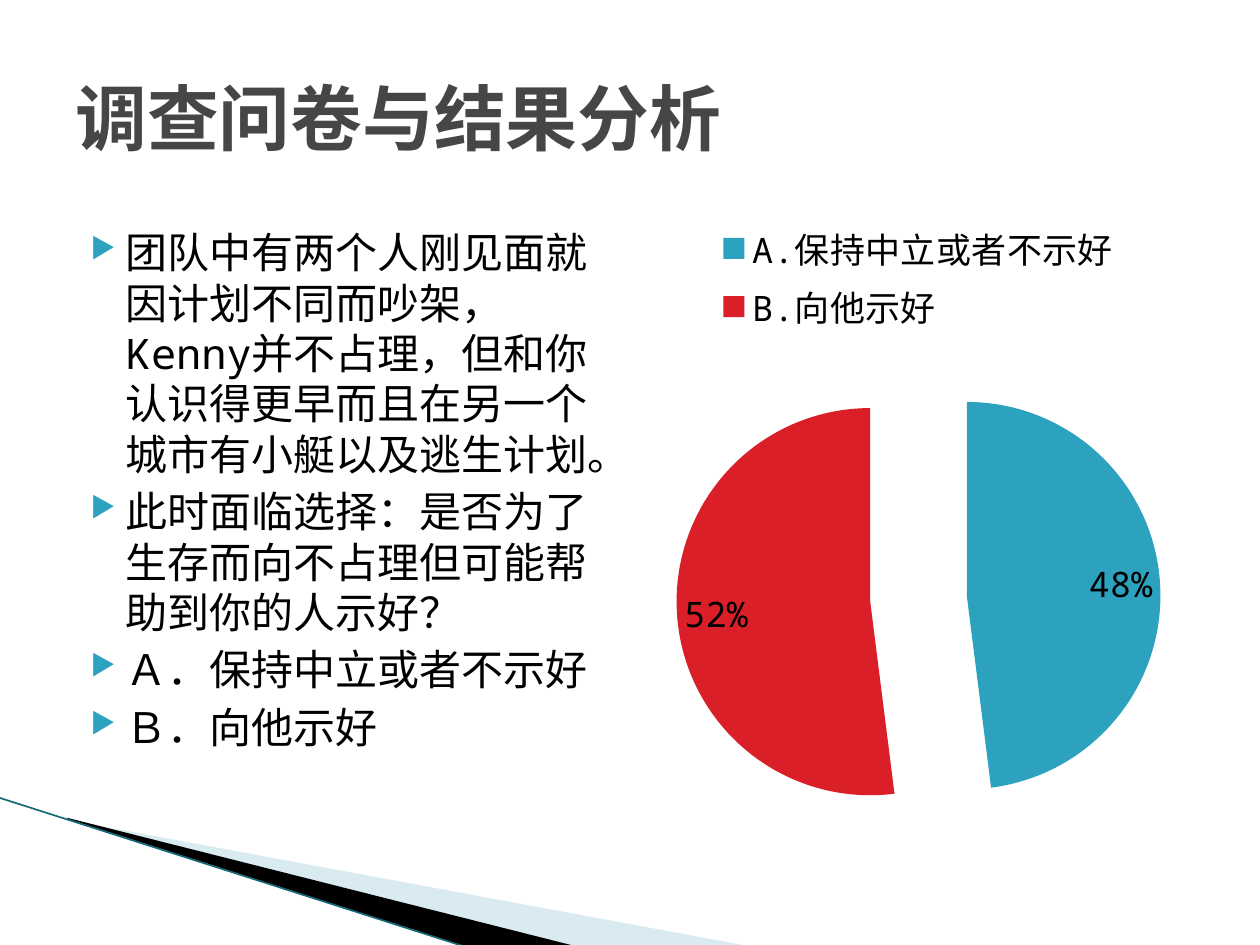
from lxml import etree
from pptx import Presentation
from pptx.chart.data import CategoryChartData
from pptx.dml.color import RGBColor
from pptx.enum.chart import XL_CHART_TYPE, XL_LABEL_POSITION, XL_LEGEND_POSITION
from pptx.enum.shapes import MSO_CONNECTOR
from pptx.enum.text import MSO_ANCHOR
from pptx.oxml.ns import qn
from pptx.util import Inches, Pt

PIE = XL_CHART_TYPE.PIE
INSIDE_END = XL_LABEL_POSITION.INSIDE_END
LEGEND_TOP = XL_LEGEND_POSITION.TOP
STRAIGHT = MSO_CONNECTOR.STRAIGHT
MIDDLE = MSO_ANCHOR.MIDDLE

FONT = "Noto Sans Mono"
BLACK, GREY, TEAL, RED = "000000", "464646", "2DA2BF", "DA1F28"
PALE_BLUE, EDGE_BLUE = "A0CBDC", "17687A"

TITLE = "调查问卷与结果分析"
POINTS = [
    "团队中有两个人刚见面就因计划不同而吵架，Kenny并不占理，但和你认识得更早而且在另一个城市有小艇以及逃生计划。",
    "此时面临选择：是否为了生存而向不占理但可能帮助到你的人示好？",
    "Ａ．保持中立或者不示好",
    "Ｂ．向他示好",
]
ANSWERS = [("A.保持中立或者不示好", 48, TEAL), ("B.向他示好", 52, RED)]


def rgb(color):
    return RGBColor.from_string(color)


def set_font(font, size, color, bold=False):
    font.name, font.size, font.bold = FONT, Pt(size), bold
    font.color.rgb = rgb(color)


def set_east_asian_font(run):
    etree.SubElement(run.font._element, qn("a:ea"), typeface=FONT)


def add_wedge(slide, points, color, opacity=100):
    corners = [(Inches(x), Inches(y)) for x, y in points]
    builder = slide.shapes.build_freeform(*corners[0])
    builder.add_line_segments(corners[1:], close=True)
    wedge = builder.convert_to_shape()
    wedge.shadow.inherit = False
    wedge.fill.solid()
    wedge.fill.fore_color.rgb = rgb(color)
    wedge.line.fill.background()
    if opacity < 100:
        fill_color = wedge._element.spPr.find(".//" + qn("a:srgbClr"))
        etree.SubElement(fill_color, qn("a:alpha"), val=str(opacity * 1000))


def add_corner_decoration(slide, left, top):
    def place(*offsets):
        return [(left + x, top + y) for x, y in offsets]

    add_wedge(slide, place((0.55, 0.18), (5.95, 1.18), (4.56, 1.18), (0.55, 0.17)),
              PALE_BLUE, 40)
    add_wedge(slide, place((0.53, 0.16), (4.57, 1.18), (3.72, 1.19), (0.54, 0.17)), BLACK)
    (x1, y1), (x2, y2) = place((-0.01, 0), (3.71, 1.19))
    edge = slide.shapes.add_connector(STRAIGHT, Inches(x1), Inches(y1), Inches(x2), Inches(y2))
    edge.line.color.rgb = rgb(EDGE_BLUE)
    edge.line.width = Pt(0.95)
    etree.SubElement(edge._element.spPr, qn("a:effectLst"))


def add_text_frame(slide, box):
    frame = slide.shapes.add_textbox(*map(Inches, box)).text_frame
    frame.word_wrap = True
    return frame


def add_title(slide, box):
    frame = add_text_frame(slide, box)
    frame.vertical_anchor = MIDDLE
    frame.text = TITLE
    run = frame.paragraphs[0].runs[0]
    set_font(run.font, 41, GREY, bold=True)
    set_east_asian_font(run)


def add_bullet(paragraph):
    properties = paragraph._p.get_or_add_pPr()
    properties.set("marL", str(Inches(0.4)))
    properties.set("indent", str(Inches(-0.28)))
    bullet_color = etree.SubElement(properties, qn("a:buClr"))
    etree.SubElement(bullet_color, qn("a:srgbClr"), val=TEAL)
    etree.SubElement(properties, qn("a:buSzPct"), val="68000")
    etree.SubElement(properties, qn("a:buChar"), char="▶")


def add_question(slide, box):
    frame = add_text_frame(slide, box)
    frame.text = "\n".join(POINTS)
    for index, paragraph in enumerate(frame.paragraphs):
        add_bullet(paragraph)
        paragraph.space_before = Pt(4 if index else 0)
        run = paragraph.runs[0]
        set_font(run.font, 24, BLACK)
        set_east_asian_font(run)


def add_answer_pie(slide, box):
    names, shares, colors = zip(*ANSWERS)
    data = CategoryChartData()
    data.categories = names
    data.add_series("Series 1", shares)
    chart = slide.shapes.add_chart(PIE, *map(Inches, box), data).chart
    set_font(chart.font, 18, BLACK)
    chart.has_title = False
    chart.has_legend = True
    chart.legend.position = LEGEND_TOP
    chart.legend.include_in_layout = False
    set_font(chart.legend.font, 20, BLACK)

    plot = chart.plots[0]
    plot.vary_by_categories = True
    series = plot.series[0]
    for index, color in enumerate(colors):
        fill = series.points[index].format.fill
        fill.solid()
        fill.fore_color.rgb = rgb(color)
    explosion = etree.Element(qn("c:explosion"), val="25")
    series._element.find(qn("c:tx")).addnext(explosion)

    plot.has_data_labels = True
    labels = plot.data_labels
    labels.show_value = False
    labels.show_percentage = True
    labels.number_format, labels.number_format_is_linked = "0%", False
    labels.position = INSIDE_END
    set_font(labels.font, 20, BLACK)


def main():
    deck = Presentation()
    deck.slide_width, deck.slide_height = Inches(10), Inches(7.5)
    slide = deck.slides.add_slide(deck.slide_layouts[6])
    add_corner_decoration(slide, 0, 6.33)
    add_title(slide, (0.5, 0.3, 9, 1.25))
    add_question(slide, (0.5, 1.75, 4.42, 4.95))
    add_answer_pie(slide, (4.97, 1.64, 4.64, 5.17))
    deck.save("out.pptx")


if __name__ == "__main__":
    main()
